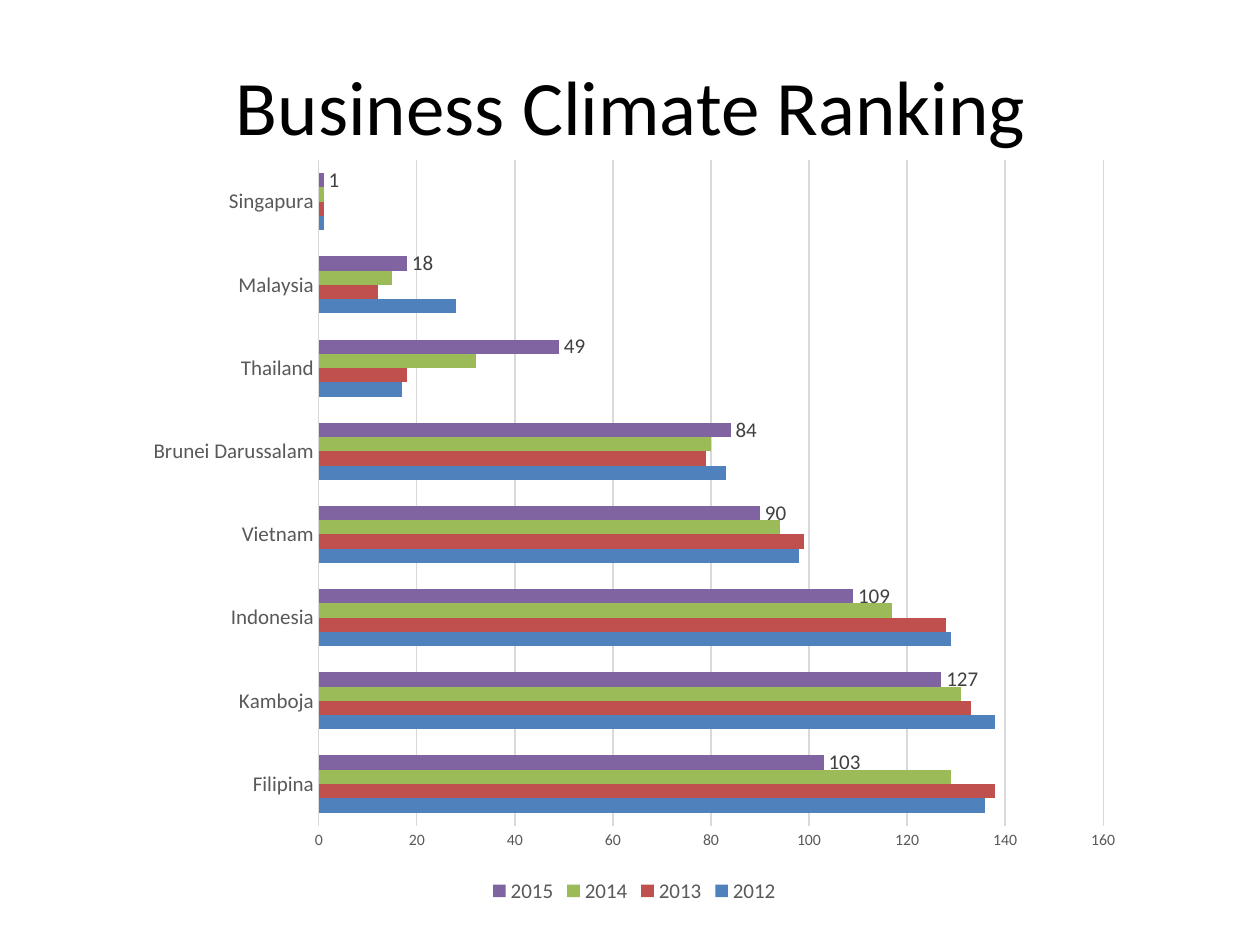
from dataclasses import dataclass

from pptx import Presentation
from pptx.chart.data import CategoryChartData
from pptx.dml.color import RGBColor
from pptx.enum.chart import XL_CHART_TYPE, XL_LABEL_POSITION, XL_LEGEND_POSITION, XL_TICK_MARK
from pptx.enum.text import MSO_ANCHOR, PP_ALIGN
from pptx.slide import Slide
from pptx.text.text import Font
from pptx.util import Pt

CLUSTERED_BARS = XL_CHART_TYPE.BAR_CLUSTERED
OUTSIDE_END = XL_LABEL_POSITION.OUTSIDE_END
BOTTOM = XL_LEGEND_POSITION.BOTTOM
NO_TICK = XL_TICK_MARK.NONE
MIDDLE = MSO_ANCHOR.MIDDLE
CENTER = PP_ALIGN.CENTER

FONT_NAME = "Calibri"
BLACK = RGBColor(0x00, 0x00, 0x00)
DARK_GRAY = RGBColor(0x40, 0x40, 0x40)
GRAY = RGBColor(0x59, 0x59, 0x59)
LIGHT_GRAY = RGBColor(0xD9, 0xD9, 0xD9)
BLUE = RGBColor(0x4F, 0x81, 0xBD)
RED = RGBColor(0xC0, 0x50, 0x4D)
GREEN = RGBColor(0x9B, 0xBB, 0x59)
PURPLE = RGBColor(0x80, 0x64, 0xA2)


@dataclass(frozen=True)
class YearRanking:
    year: str
    ranks: tuple[int, ...]
    color: RGBColor
    labelled: bool = False


COUNTRIES = (
    "Filipina", "Kamboja", "Indonesia", "Vietnam",
    "Brunei Darussalam", "Thailand", "Malaysia", "Singapura",
)
RANKINGS = (
    YearRanking("2012", (136, 138, 129, 98, 83, 17, 28, 1), BLUE),
    YearRanking("2013", (138, 133, 128, 99, 79, 18, 12, 1), RED),
    YearRanking("2014", (129, 131, 117, 94, 80, 32, 15, 1), GREEN),
    YearRanking("2015", (103, 127, 109, 90, 84, 49, 18, 1), PURPLE, labelled=True),
)


def style_font(font: Font, size: float, color: RGBColor) -> None:
    font.name = FONT_NAME
    font.size = Pt(size)
    font.bold = False
    font.color.rgb = color


def add_heading(slide: Slide, wording: str) -> None:
    heading = slide.shapes.add_textbox(Pt(36.72), Pt(20.16), Pt(648), Pt(79.2)).text_frame
    heading.word_wrap = True
    heading.vertical_anchor = MIDDLE
    paragraph = heading.paragraphs[0]
    paragraph.alignment = CENTER
    run = paragraph.add_run()
    run.text = wording
    style_font(run.font, 44, BLACK)


def add_ranking_chart(slide: Slide, rankings: tuple[YearRanking, ...]) -> None:
    ranking_data = CategoryChartData()
    ranking_data.categories = COUNTRIES
    for ranking in rankings:
        ranking_data.add_series(ranking.year, ranking.ranks)
    chart = slide.shapes.add_chart(
        CLUSTERED_BARS, Pt(76.32), Pt(82.8), Pt(572.4), Pt(436.32), ranking_data
    ).chart
    style_font(chart.font, 10, BLACK)
    chart.has_title = False
    chart.has_legend = True
    chart.legend.position = BOTTOM
    chart.legend.include_in_layout = False
    style_font(chart.legend.font, 12, GRAY)

    country_axis, rank_axis = chart.category_axis, chart.value_axis
    for axis, size in ((country_axis, 12), (rank_axis, 9)):
        axis.major_tick_mark = axis.minor_tick_mark = NO_TICK
        style_font(axis.tick_labels.font, size, GRAY)
    rank_axis.minimum_scale, rank_axis.maximum_scale = 0, 160
    rank_axis.major_unit = 20
    rank_axis.has_major_gridlines = True
    rank_axis.format.line.fill.background()
    for line in (country_axis.format.line, rank_axis.major_gridlines.format.line):
        line.color.rgb = LIGHT_GRAY
        line.width = Pt(0.75)

    plot = chart.plots[0]
    plot.gap_width = 182
    plot.overlap = 0
    plot.vary_by_categories = False
    for ranking, bars in zip(rankings, plot.series):
        bars.format.fill.solid()
        bars.format.fill.fore_color.rgb = ranking.color
        bars.invert_if_negative = False
        if ranking.labelled:
            labels = bars.data_labels
            labels.show_value = True
            labels.position = OUTSIDE_END
            style_font(labels.font, 12, DARK_GRAY)


def main() -> None:
    """Build the business climate ranking slide."""
    deck = Presentation()
    deck.slide_width, deck.slide_height = Pt(720), Pt(540)
    slide = deck.slides.add_slide(deck.slide_layouts[6])
    add_heading(slide, "Business Climate Ranking")
    add_ranking_chart(slide, RANKINGS)
    deck.save("out.pptx")


if __name__ == "__main__":
    main()
